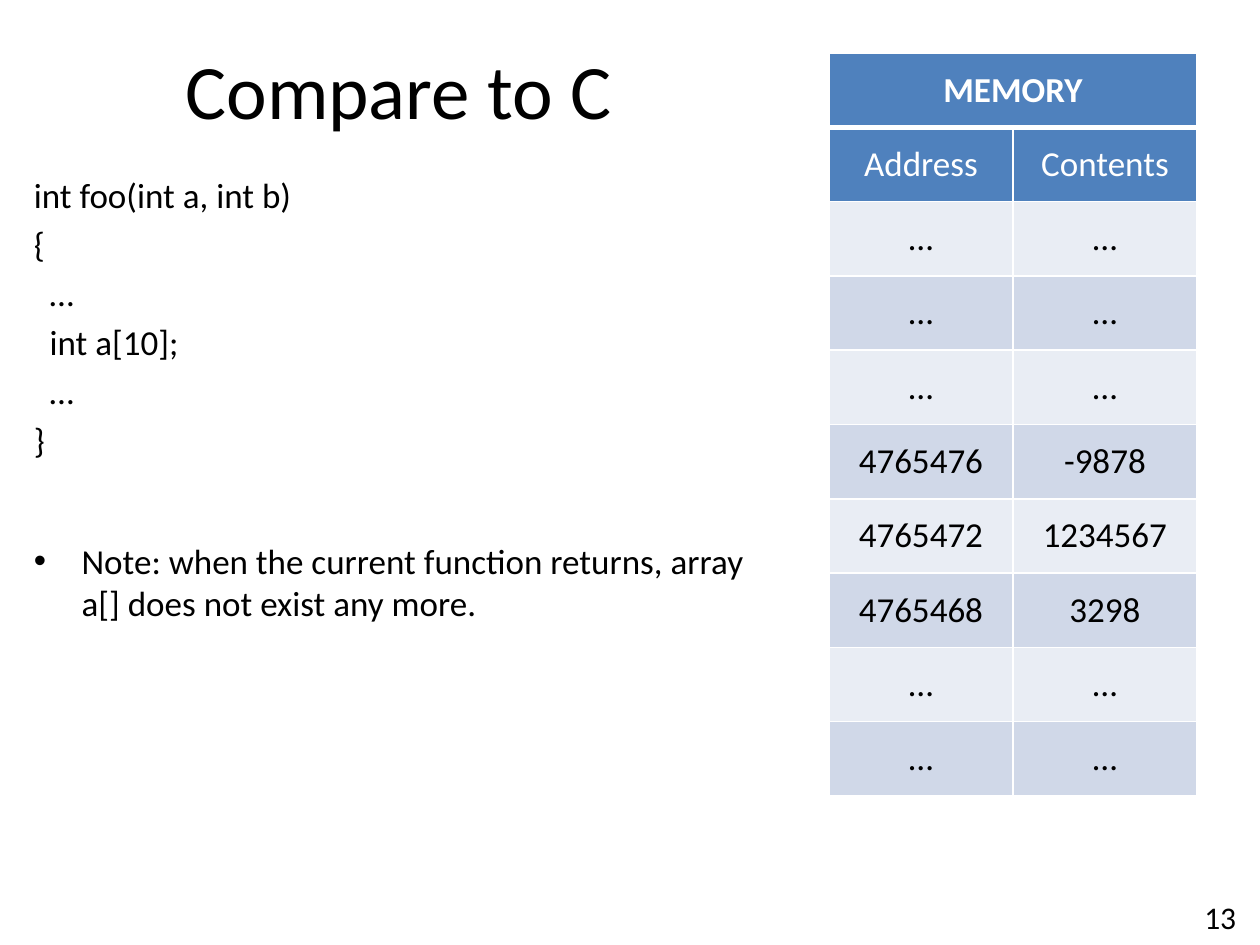
from lxml.etree import SubElement
from pptx import Presentation
from pptx.dml.color import RGBColor
from pptx.enum.text import MSO_ANCHOR, PP_ALIGN
from pptx.oxml import parse_xml
from pptx.oxml.ns import nsdecls, qn
from pptx.util import Inches, Pt

BLACK = RGBColor(0x00, 0x00, 0x00)
WHITE = RGBColor(0xFF, 0xFF, 0xFF)
BLUE = RGBColor(0x4F, 0x81, 0xBD)
LIGHT = RGBColor(0xE9, 0xED, 0xF4)
DARK = RGBColor(0xD0, 0xD8, 0xE8)

deck = Presentation()
deck.slide_width, deck.slide_height = Inches(10), Inches(7.5)
slide = deck.slides.add_slide(deck.slide_layouts[6])


def style(para, size, color=BLACK, align=PP_ALIGN.LEFT, bold=False):
    para.alignment = align
    for run in para.runs:
        font = run.font
        font.name, font.size, font.bold = "Calibri", Pt(size), bold
        font.color.rgb = color


def add_box(left, top, width, height, text):
    box = slide.shapes.add_textbox(*map(Inches, (left, top, width, height)))
    frame = box.text_frame
    frame.word_wrap = True
    frame.text = text
    return frame


# Title
title = add_box(0.5, 0.08, 5.33, 1.25, "Compare to C")
title.vertical_anchor = MSO_ANCHOR.MIDDLE
style(title.paragraphs[0], 44, align=PP_ALIGN.CENTER)

# Code and note
code = ["int foo(int a, int b)", "{", "  …", "  int a[10];", "  …", "}"]
note = "Note: when the current function returns, array a[] does not exist any more."
body = add_box(0.17, 1.33, 6.17, 5.5, "\n".join(code + [note]))
for i, para in enumerate(body.paragraphs):
    style(para, 20)
    if i:
        para.space_before = Pt(4)

# Bullet on the note, set apart from the code
last = body.paragraphs[-1]
last.space_before = Pt(45)
props = last._p.get_or_add_pPr()
props.set("marL", str(Inches(0.38)))
props.set("indent", str(-Inches(0.38)))
SubElement(props, qn("a:buFont")).set("typeface", "Arial")
SubElement(props, qn("a:buChar")).set("char", "•")

# Memory table
rows = [
    ("MEMORY", ""),
    ("Address", "Contents"),
    *[("…", "…")] * 3,
    ("4765476", "-9878"),
    ("4765472", "1234567"),
    ("4765468", "3298"),
    *[("…", "…")] * 2,
]
wide, high = 1.46, 0.59
frame = slide.shapes.add_table(
    len(rows), 2, Inches(6.58), Inches(0.42),
    Inches(2 * wide), Inches(len(rows) * high))
table = frame.table
for r, row in enumerate(rows):
    table.rows[r].height = Inches(high)
    for c, text in enumerate(row):
        cell = table.cell(r, c)
        cell.text = text
        cell.vertical_anchor = MSO_ANCHOR.MIDDLE
        style(cell.text_frame.paragraphs[0], 20, WHITE if r < 2 else BLACK,
              PP_ALIGN.CENTER, r == 0)
        # White borders, thick below the heading
        edges = {"lnL": 1, "lnR": 1, "lnT": 3 if r == 1 else 1,
                 "lnB": 3 if r == 0 else 1}
        for tag, width in edges.items():
            cell._tc.get_or_add_tcPr().append(parse_xml(
                f'<a:{tag} {nsdecls("a")} w="{Pt(width)}"><a:solidFill>'
                f'<a:srgbClr val="{WHITE}"/></a:solidFill></a:{tag}>'))
        cell.fill.solid()
        cell.fill.fore_color.rgb = BLUE if r < 2 else (LIGHT, DARK)[r % 2]
table.cell(0, 0).merge(table.cell(0, 1))

# Page number
page = add_box(7.58, 7.08, 2.33, 0.4, "13")
style(page.paragraphs[0], 18, align=PP_ALIGN.RIGHT)

deck.save("out.pptx")
